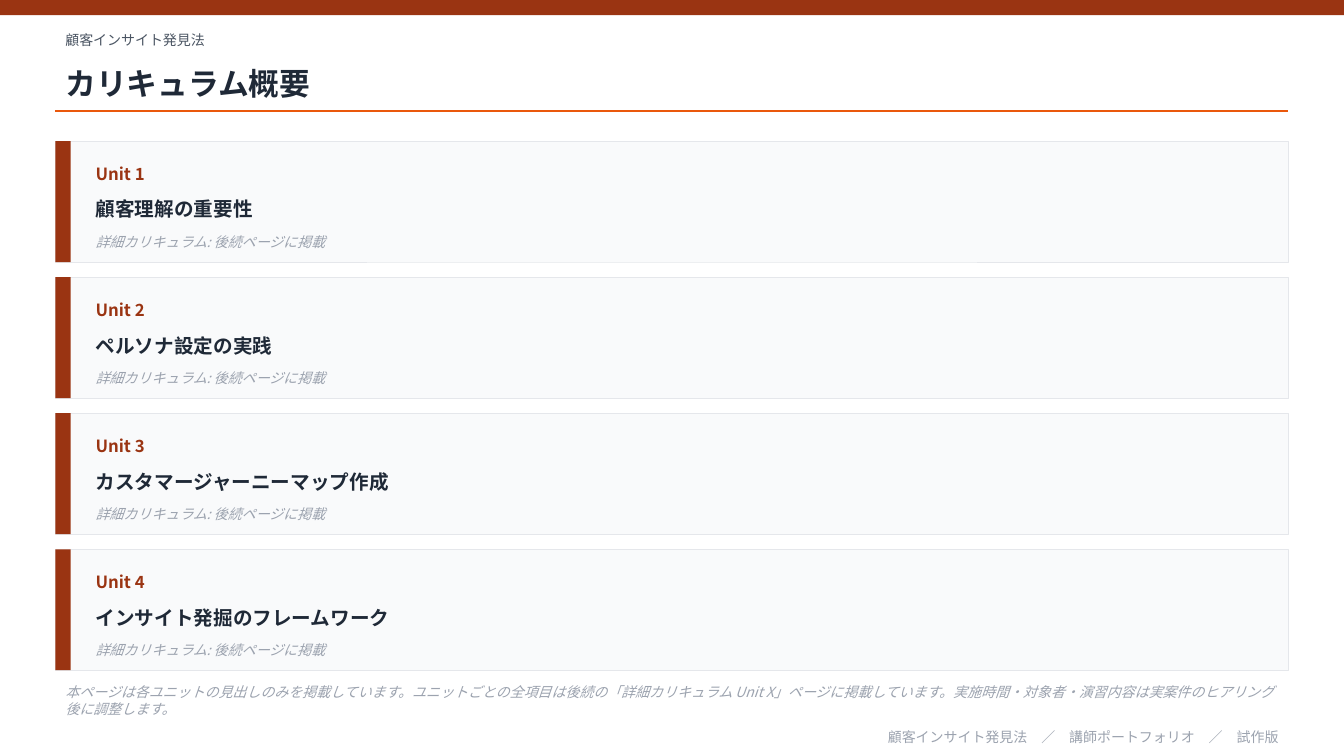
import lxml.etree
import pptx
import pptx.dml.color
import pptx.enum.shapes
import pptx.enum.text
import pptx.oxml.ns
import pptx.util

Pt = pptx.util.Pt
qn = pptx.oxml.ns.qn
FONT = "Noto Sans CJK JP"
COLORS = {
    "brand": "9A3412",
    "accent": "EA580C",
    "ink": "1F2937",
    "body": "4B5563",
    "muted": "9CA3AF",
    "card": "F9FAFB",
    "border": "E5E7EB",
}
LEFT, WIDTH = 39.6, 880.56
CARD_TOP, CARD_HEIGHT, CARD_PITCH = 100.8, 86.4, 97.2
BAR = 10.8
UNITS = [
    "顧客理解の重要性",
    "ペルソナ設定の実践",
    "カスタマージャーニーマップ作成",
    "インサイト発掘のフレームワーク",
]


class Deck:
    """Holds the style and the current slide, and draws each kind of element."""

    def __init__(self, prs):
        self.s = prs.slides.add_slide(prs.slide_layouts[5])

    def color(self, name):
        return pptx.dml.color.RGBColor.from_string(COLORS[name])

    def rect(self, x, y, w, h, fill, line=None):
        sp = self.s.shapes.add_shape(
            pptx.enum.shapes.MSO_SHAPE.RECTANGLE, Pt(x), Pt(y), Pt(w), Pt(h))
        sp.shadow.inherit = False
        sp.fill.solid()
        sp.fill.fore_color.rgb = self.color(fill)
        if line:
            sp.line.color.rgb = self.color(line)
            sp.line.width = Pt(0.5)
        else:
            sp.line.fill.background()

    def rule(self, x, y, w, color):
        c = self.s.shapes.add_connector(
            pptx.enum.shapes.MSO_CONNECTOR.STRAIGHT, Pt(x), Pt(y), Pt(x + w), Pt(y))
        c.line.color.rgb = self.color(color)
        c.line.width = Pt(1)
        lxml.etree.SubElement(c._element.spPr, qn("a:effectLst"))

    def set_text(self, sp, text, size, color, bold=False, italic=False, align="LEFT"):
        tf = sp.text_frame
        tf.text = text
        tf.word_wrap = True
        tf.auto_size = pptx.enum.text.MSO_AUTO_SIZE.NONE
        tf.vertical_anchor = pptx.enum.text.MSO_ANCHOR.MIDDLE
        p = tf.paragraphs[0]
        p.alignment = pptx.enum.text.PP_ALIGN[align]
        p.font.size = Pt(size)
        p.font.bold = bold
        p.font.italic = italic
        p.font.color.rgb = self.color(color)
        p.font.name = FONT
        props = p._p.find(".//" + qn("a:defRPr"))
        lxml.etree.SubElement(props, qn("a:ea"), typeface=FONT)

    def text(self, x, y, w, h, text, size, color, **style):
        sp = self.s.shapes.add_textbox(Pt(x), Pt(y), Pt(w), Pt(h))
        self.set_text(sp, text, size, color, **style)

    def title(self, x, y, w, h, text, size, color):
        sp = self.s.shapes.title
        sp.left, sp.top, sp.width, sp.height = Pt(x), Pt(y), Pt(w), Pt(h)
        self.set_text(sp, text, size, color, bold=True)

    def card(self, y, label, heading):
        x, w = LEFT + 21.6, WIDTH - 36
        self.rect(LEFT, y, WIDTH, CARD_HEIGHT, "card", "border")
        self.rect(LEFT, y, BAR, CARD_HEIGHT, "brand")
        self.text(x, y + 8.64, 108, 28.8, label, 12, "brand", bold=True)
        self.text(x, y + 32.4, w, 32.4, heading, 14, "ink", bold=True)
        self.text(x, y + 61.2, w, 21.6, "詳細カリキュラム: 後続ページに掲載",
                  10, "muted", italic=True)


def main():
    prs = pptx.Presentation()
    prs.slide_width, prs.slide_height = Pt(960), Pt(540)
    deck = Deck(prs)
    deck.rect(0, 0, 960, BAR, "brand")
    deck.text(LEFT, 18, WIDTH, 21.6, "顧客インサイト発見法", 10, "body")
    deck.title(LEFT, 39.6, WIDTH, 39.6, "カリキュラム概要", 22, "ink")
    deck.rule(LEFT, 79.2, WIDTH, "accent")
    for i, heading in enumerate(UNITS):
        deck.card(CARD_TOP + i * CARD_PITCH, f"Unit {i + 1}", heading)
    deck.text(LEFT, 486, WIDTH, 28.8,
              "本ページは各ユニットの見出しのみを掲載しています。"
              "ユニットごとの全項目は後続の「詳細カリキュラム Unit X」ページに掲載しています。"
              "実施時間・対象者・演習内容は実案件のヒアリング後に調整します。",
              10, "muted", italic=True)
    deck.text(LEFT, 518.4, WIDTH, 15.84,
              "顧客インサイト発見法　／　講師ポートフォリオ　／　試作版",
              10, "muted", align="RIGHT")
    prs.save("out.pptx")


if __name__ == "__main__":
    main()
